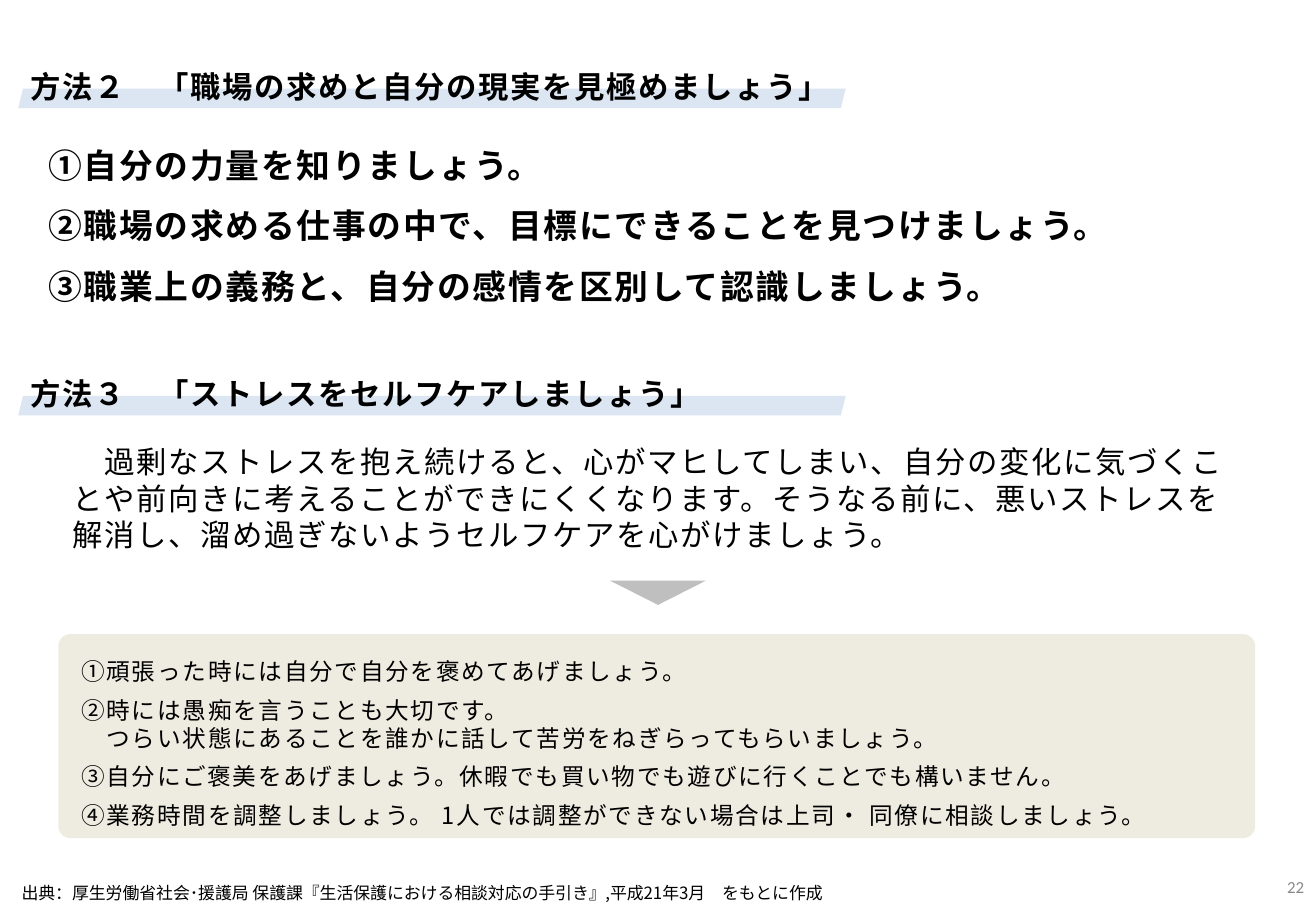
from pptx import Presentation
from pptx import util as u
from pptx.dml import color as c
from pptx.enum import shapes, text
from pptx.oxml import ns
from lxml import etree

PX = 9144
SANS = "Noto Sans CJK JP"
HUES = {"ink": "000000", "gray": "898989", "band": "DCE6F2",
        "box": "EEECE1", "mark": "BFBFBF"}
KIND = shapes.MSO_SHAPE
ALIGN = text.PP_ALIGN
MID = text.MSO_ANCHOR.MIDDLE
GROW = text.MSO_AUTO_SIZE.SHAPE_TO_FIT_TEXT
SIDES = ("margin_left", "margin_top", "margin_right", "margin_bottom")

HEADS = [
    (51, "方法２　「職場の求めと自分の現実を見極めましょう」"),
    (304, "方法３　「ストレスをセルフケアしましょう」"),
]
GOALS = [
    "①自分の力量を知りましょう。",
    "②職場の求める仕事の中で、目標にできることを見つけましょう。",
    "③職業上の義務と、自分の感情を区別して認識しましょう。",
]
STRESS = ["　過剰なストレスを抱え続けると、心がマヒしてしまい、自分の変化に気づくことや"
          "前向きに考えることができにくくなります。そうなる前に、悪いストレスを解消し、"
          "溜め過ぎないようセルフケアを心がけましょう。"]
TIPS = [
    "①頑張った時には自分で自分を褒めてあげましょう。",
    "②時には愚痴を言うことも大切です。\v"
    "　つらい状態にあることを誰かに話して苦労をねぎらってもらいましょう。",
    "③自分にご褒美をあげましょう。休暇でも買い物でも遊びに行くことでも構いません。",
    "④業務時間を調整しましょう。 1人では調整ができない場合は上司・ 同僚に相談しましょう。",
]
SOURCE = ["出典：厚生労働省社会･援護局 保護課『生活保護における相談対応の手引き』"
          ",平成21年3月　をもとに作成"]


def put(item, vals):
    for key, val in vals.items():
        setattr(item, key, val)


def emu(box):
    return [n * PX for n in box]


def write(shape, lines, size, hue="ink", face=SANS, bold=False, track=0,
          after=0, hang=0, align=ALIGN.LEFT, pads=(10, 5, 10, 5), **frame):
    tf = shape.text_frame
    put(tf, {"word_wrap": True, "vertical_anchor": text.MSO_ANCHOR.TOP, **frame})
    put(tf, dict(zip(SIDES, emu(pads))))
    for i, line in enumerate(lines):
        para = tf.paragraphs[0] if i == 0 else tf.add_paragraph()
        para.text = line
        last = i == len(lines) - 1
        put(para, {"alignment": align,
                   "space_after": u.Pt(0 if last and hang else after)})
        if hang and "\v" not in line:
            props = para._p.get_or_add_pPr()
            props.set("marL", str(hang * PX))
            props.set("indent", str(-hang * PX))
        for run in para.runs:
            put(run.font, {"name": face, "size": u.Pt(size), "bold": bold})
            run.font.color.rgb = c.RGBColor.from_string(HUES[hue])
            props = run._r.get_or_add_rPr()
            props.set("spc", str(track * 100))
            etree.SubElement(props, ns.qn("a:ea")).set("typeface", face)


def label(slide, box, lines, size, **style):
    write(slide.shapes.add_textbox(*emu(box)), lines, size, **style)


def block(slide, kind, box, hue=None):
    shape = slide.shapes.add_shape(kind, *emu(box))
    shape.shadow.inherit = False
    shape.line.fill.background()
    if hue:
        shape.fill.solid()
        shape.fill.fore_color.rgb = c.RGBColor.from_string(HUES[hue])
    else:
        shape.fill.background()
    return shape


def head(slide, top, title):
    block(slide, KIND.PARALLELOGRAM, (15, top + 22, 681, 16), "band")
    label(slide, (15, top, 768, 40), [title], 18,
          bold=True, track=1, auto_size=GROW)


def main():
    deck = Presentation()
    put(deck, {"slide_width": 1083 * PX, "slide_height": 750 * PX})
    slide = deck.slides.add_slide(deck.slide_layouts[6])

    label(slide, (1042, 710, 41, 40), ["22"], 10, hue="gray", face="Calibri",
          align=ALIGN.RIGHT, vertical_anchor=MID)
    for top, title in HEADS:
        head(slide, top, title)
    label(slide, (30, 114, 984, 145), GOALS, 20,
          bold=True, track=1, after=12, auto_size=GROW)
    label(slide, (50, 360, 984, 101), STRESS, 18,
          track=1, after=12, auto_size=GROW)

    mark = block(slide, KIND.ISOSCELES_TRIANGLE, (502, 478, 79, 20), "mark")
    mark.rotation = 180
    tips = block(slide, KIND.ROUNDED_RECTANGLE, (48, 522, 985, 168), "box")
    tips.adjustments[0] = 0.06
    write(tips, TIPS, 14, track=1, after=6, hang=27, pads=(16,) * 4)
    note = block(slide, KIND.ROUNDED_RECTANGLE, (7, 725, 795, 20))
    write(note, SOURCE, 10, pads=(10, 0, 10, 0), vertical_anchor=MID)

    deck.save("out.pptx")


if __name__ == "__main__":
    main()
